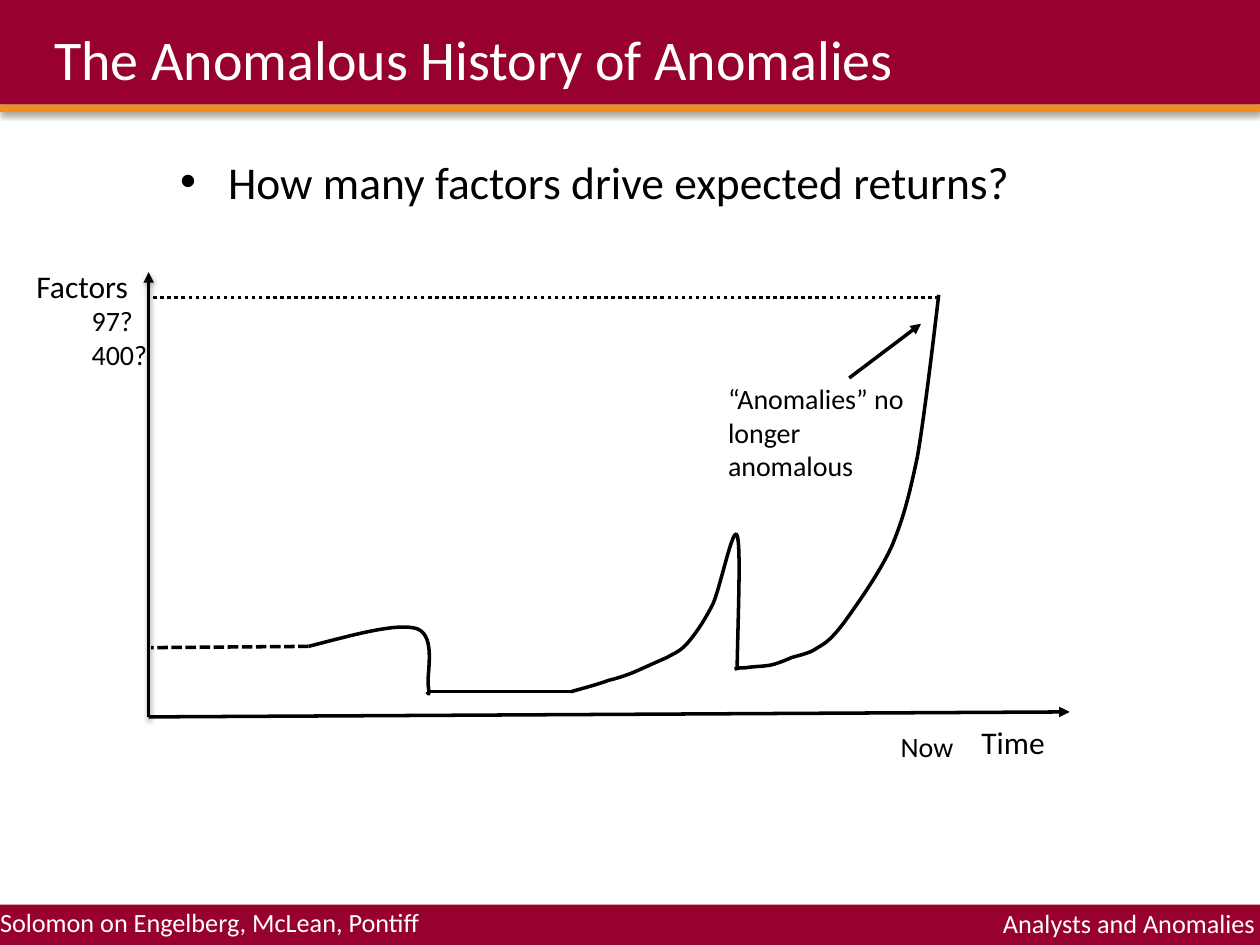
"""Build a slide sketching how the number of return factors changed over time."""
from dataclasses import dataclass
from typing import Optional

import lxml.etree
import pptx
import pptx.dml.color
import pptx.enum.dml
import pptx.enum.shapes
import pptx.enum.text
import pptx.oxml
import pptx.oxml.ns
import pptx.util
from pptx.util import Inches

CRIMSON = pptx.dml.color.RGBColor(0x98, 0x01, 0x2E)
ORANGE = pptx.dml.color.RGBColor(0xF3, 0x8D, 0x1E)
WHITE = pptx.dml.color.RGBColor(0xFF, 0xFF, 0xFF)
BLACK = pptx.dml.color.RGBColor(0, 0, 0)
FONT = "Calibri"
DASH = pptx.enum.dml.MSO_LINE.SQUARE_DOT
DOT = pptx.enum.dml.MSO_LINE.ROUND_DOT
LEFT = pptx.enum.text.PP_ALIGN.LEFT
RIGHT = pptx.enum.text.PP_ALIGN.RIGHT

Point = tuple[float, float]


@dataclass
class Bar:
    top: float
    height: float
    color: pptx.dml.color.RGBColor
    shadow_alpha: int = 35


@dataclass
class Label:
    text: str
    left: float
    top: float
    width: float
    height: float
    size: int = 16
    color: pptx.dml.color.RGBColor = BLACK
    alignment: pptx.enum.text.PP_ALIGN = LEFT
    inset: Optional[float] = None


@dataclass
class Line:
    start: Point
    end: Point
    dash: Optional[pptx.enum.dml.MSO_LINE] = None
    arrow: bool = False
    shadow_alpha: int = 0


@dataclass
class Curve:
    start: Point
    segments: list[tuple[Point, Point, Point]]


BARS = [Bar(7.18, 0.32, CRIMSON), Bar(0, 0.83, CRIMSON), Bar(0.83, 0.06, ORANGE, 38)]
LABELS = [
    Label("Solomon on Engelberg, McLean, Pontiff", 0, 7.19, 3.75, 0.25, 15, WHITE, inset=0),
    Label("Analysts and Anomalies", 6.69, 7.2, 3.27, 0.25, 15, WHITE, RIGHT, 0),
    Label("Factors", 0.19, 2.07, 0.99, 0.4, 18),
    Label("Time", 7.69, 5.69, 0.99, 0.4, 18),
    Label("Now", 7.05, 5.74, 1.39, 0.37),
    Label("“Anomalies” no longer anomalous", 5.68, 2.98, 1.63, 1.18),
    Label("97?\v400?", 0.63, 2.36, 1.1, 0.64),
]
LINES = [
    Line((1.18, 5.69), (1.18, 2.16), arrow=True, shadow_alpha=38),
    Line((1.18, 5.69), (8.49, 5.65), arrow=True),
    Line((3.39, 5.49), (4.53, 5.49)),
    Line((2.45, 5.13), (1.2, 5.14), DASH),
    Line((6.74, 3), (7.31, 2.57), arrow=True),
    Line((7.45, 2.36), (1.18, 2.36), DOT),
]
CURVES = [
    Curve((2.45, 5.13), [
        ((2.8, 5.04), (3.15, 4.94), (3.31, 4.99)),
        ((3.47, 5.05), (3.38, 5.37), (3.4, 5.45)),
        ((3.41, 5.53), (3.4, 5.51), (3.39, 5.49)),
    ]),
    Curve((4.53, 5.49), [
        ((4.64, 5.46), (4.75, 5.43), (4.83, 5.4)),
        ((4.91, 5.38), (4.94, 5.37), (5.02, 5.34)),
        ((5.09, 5.31), (5.22, 5.25), (5.29, 5.22)),
        ((5.36, 5.18), (5.4, 5.17), (5.46, 5.1)),
        ((5.52, 5.03), (5.59, 4.93), (5.66, 4.79)),
        ((5.72, 4.65), (5.82, 4.16), (5.85, 4.25)),
        ((5.88, 4.33), (5.86, 4.82), (5.85, 5.3)),
    ]),
    Curve((5.83, 5.31), [
        ((5.86, 5.3), (5.88, 5.3), (5.92, 5.3)),
        ((5.97, 5.29), (6.05, 5.29), (6.11, 5.28)),
        ((6.17, 5.27), (6.28, 5.22), (6.28, 5.22)),
        ((6.34, 5.2), (6.42, 5.19), (6.49, 5.14)),
        ((6.56, 5.1), (6.6, 5.07), (6.7, 4.94)),
        ((6.8, 4.8), (6.98, 4.55), (7.08, 4.33)),
        ((7.17, 4.11), (7.21, 3.96), (7.28, 3.63)),
        ((7.34, 3.3), (7.45, 2.34), (7.45, 2.34)),
    ]),
]


def add_child(parent, tag: str, **attributes: str):
    return lxml.etree.SubElement(parent, pptx.oxml.ns.qn(tag), attributes)


def set_shadow(properties, alpha: int) -> None:
    effects = add_child(properties, "a:effectLst")
    if alpha:
        shadow = add_child(effects, "a:outerShdw", blurRad="39370", dist="21590",
                           dir="5400000", rotWithShape="0")
        color = add_child(shadow, "a:srgbClr", val="000000")
        add_child(color, "a:alpha", val=str(alpha * 1000))


def set_font(paragraph, size: int, color: pptx.dml.color.RGBColor) -> None:
    paragraph.font.name = FONT
    paragraph.font.size = pptx.util.Pt(size)
    paragraph.font.color.rgb = color


def set_stroke(line) -> None:
    line.color.rgb = BLACK
    line.width = pptx.util.Pt(2)


def place(shape, left: float, top: float, width: float, height: float) -> None:
    shape.left, shape.top = Inches(left), Inches(top)
    shape.width, shape.height = Inches(width), Inches(height)


def add_bar(slide, bar: Bar) -> None:
    shape = slide.shapes.add_shape(pptx.enum.shapes.MSO_SHAPE.RECTANGLE, 0, Inches(bar.top),
                                   Inches(10), Inches(bar.height))
    shape.fill.solid()
    shape.fill.fore_color.rgb = bar.color
    shape.line.fill.background()
    set_shadow(shape.element.spPr, bar.shadow_alpha)
    slide.shapes.title.element.addprevious(shape.element)


def add_label(slide, label: Label) -> None:
    box = slide.shapes.add_textbox(Inches(label.left), Inches(label.top),
                                   Inches(label.width), Inches(label.height))
    frame = box.text_frame
    frame.word_wrap = True
    if label.inset is not None:
        frame.margin_left = frame.margin_right = Inches(label.inset)
        frame.margin_top = frame.margin_bottom = Inches(label.inset)
    paragraph = frame.paragraphs[0]
    paragraph.text = label.text
    paragraph.alignment = label.alignment
    set_font(paragraph, label.size, label.color)


def add_line(slide, line: Line) -> None:
    connector = slide.shapes.add_connector(pptx.enum.shapes.MSO_CONNECTOR.STRAIGHT,
                                           *map(Inches, line.start + line.end))
    set_stroke(connector.line)
    if line.dash is not None:
        connector.line.dash_style = line.dash
    if line.arrow:
        add_child(connector.line._get_or_add_ln(), "a:tailEnd", type="triangle")
    set_shadow(connector.element.spPr, line.shadow_alpha)


def add_curve(slide, curve: Curve) -> None:
    builder = slide.shapes.build_freeform(*map(Inches, curve.start))
    builder.add_line_segments([tuple(map(Inches, segment[-1])) for segment in curve.segments],
                              close=False)
    shape = builder.convert_to_shape()
    outline = shape.element.find(".//" + pptx.oxml.ns.qn("a:path"))
    for straight in outline.findall(pptx.oxml.ns.qn("a:lnTo")):
        outline.remove(straight)
    for segment in curve.segments:
        bezier = add_child(outline, "a:cubicBezTo")
        for x, y in segment:
            add_child(bezier, "a:pt", x=str(Inches(x) - shape.left), y=str(Inches(y) - shape.top))
    shape.fill.background()
    set_stroke(shape.line)
    shape.shadow.inherit = False


def fill_placeholders(slide) -> None:
    title, body = slide.shapes.title, slide.placeholders[1]
    place(title, 0.33, 0.17, 9, 0.58)
    title.text_frame.text = "The Anomalous History of Anomalies"
    title.text_frame.vertical_anchor = pptx.enum.text.MSO_ANCHOR.MIDDLE
    heading = title.text_frame.paragraphs[0]
    heading.alignment = LEFT
    set_font(heading, 32, WHITE)
    place(body, 1.33, 1.17, 8, 5.5)
    body.text_frame.text = "How many factors drive expected returns?"
    question = body.text_frame.paragraphs[0]
    question.space_before, question.space_after = pptx.util.Pt(0), pptx.util.Pt(8)
    properties = question._p.get_or_add_pPr()
    properties.set("marL", str(Inches(0.38)))
    properties.set("indent", str(Inches(-0.38)))
    add_child(properties, "a:buChar", char="•")
    set_font(question, 26, BLACK)


def main() -> None:
    presentation = pptx.Presentation()
    presentation.slide_width, presentation.slide_height = Inches(10), Inches(7.5)
    slide = presentation.slides.add_slide(presentation.slide_layouts[1])
    fill_placeholders(slide)
    for draw, items in ((add_bar, BARS), (add_line, LINES), (add_curve, CURVES),
                        (add_label, LABELS)):
        for item in items:
            draw(slide, item)
    presentation.save("out.pptx")


if __name__ == "__main__":
    main()
